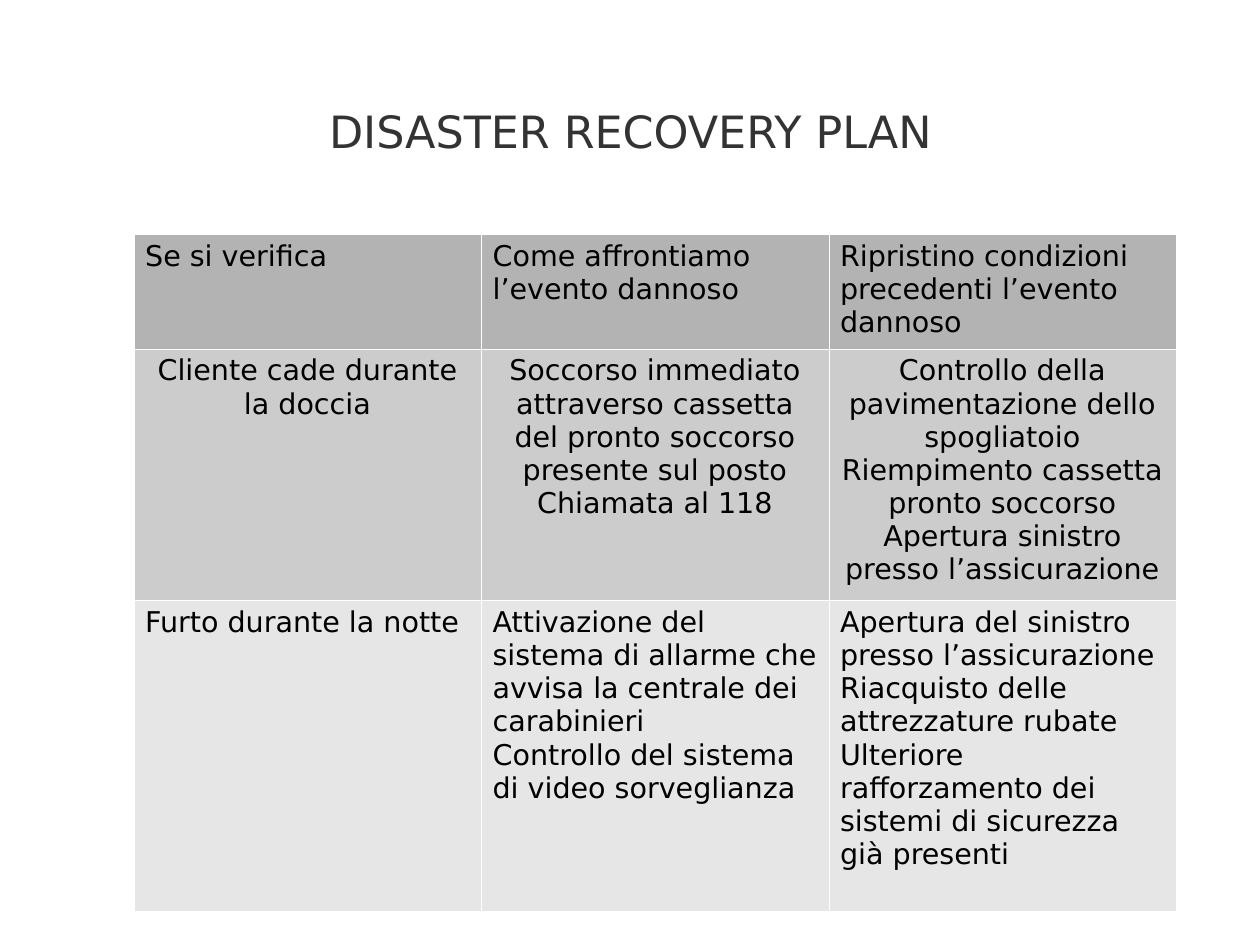
from dataclasses import dataclass

from lxml.etree import SubElement
from pptx import Presentation
from pptx.dml.color import RGBColor
from pptx.enum.text import MSO_ANCHOR, PP_ALIGN
from pptx.oxml.ns import qn
from pptx.util import Cm, Inches, Pt


@dataclass(frozen=True)
class Theme:
    font: str = "DejaVu Sans"
    title_size: float = 28
    cell_size: float = 18
    title_color: str = "333333"
    cell_color: str = "000000"
    border_color: str = "FFFFFF"
    border_width: float = 0.06
    row_fills: tuple = ("B3B3B3", "CCCCCC", "E6E6E6")


THEME = Theme()
WIDTH, HEIGHT = Cm(28), Cm(21)
LINE_HEIGHT, CELL_PADDING = 0.29, 0.11
ROW_LINES = (3, 7, 9)
ROW_HEIGHTS = [Inches(n * LINE_HEIGHT + CELL_PADDING) for n in ROW_LINES]
TITLE_BOX = [Inches(v) for v in (0.77, 0.49, 9.49, 1.31)]
TABLE_BOX = [Inches(v) for v in (1.17, 2.05, 9.12)] + [sum(ROW_HEIGHTS)]
ROW_ALIGNS = (PP_ALIGN.LEFT, PP_ALIGN.CENTER, PP_ALIGN.LEFT)
TITLE = "DISASTER RECOVERY PLAN"
PLAN = [
    [
        ["Se si verifica"],
        ["Come affrontiamo l’evento dannoso"],
        ["Ripristino condizioni precedenti l’evento dannoso"],
    ],
    [
        ["Cliente cade durante la doccia"],
        [
            "Soccorso immediato attraverso cassetta del pronto soccorso presente sul posto",
            "Chiamata al 118",
        ],
        [
            "Controllo della pavimentazione dello spogliatoio",
            "Riempimento cassetta pronto soccorso",
            "Apertura sinistro presso l’assicurazione",
        ],
    ],
    [
        ["Furto durante la notte"],
        [
            "Attivazione del sistema di allarme che avvisa la centrale dei carabinieri",
            "Controllo del sistema di video sorveglianza",
        ],
        [
            "Apertura del sinistro presso l’assicurazione",
            "Riacquisto delle attrezzature rubate",
            "Ulteriore rafforzamento dei sistemi di sicurezza già presenti",
        ],
    ],
]


def write(tf, lines, size, color, align):
    tf.text = "\n".join(lines)
    for p in tf.paragraphs:
        p.alignment = align
        p.font.name = THEME.font
        p.font.size = Pt(size)
        p.font.color.rgb = RGBColor.from_string(color)


def set_borders(cell):
    tc_pr = cell._tc.get_or_add_tcPr()
    for index, side in enumerate(("lnL", "lnR", "lnT", "lnB")):
        ln = SubElement(tc_pr, qn(f"a:{side}"), w=str(Pt(THEME.border_width)))
        fill = SubElement(ln, qn("a:solidFill"))
        SubElement(fill, qn("a:srgbClr"), val=THEME.border_color)
        tc_pr.insert(index, ln)


def add_title(slide, box):
    tf = slide.shapes.add_textbox(*box).text_frame
    tf.word_wrap = True
    tf.vertical_anchor = MSO_ANCHOR.MIDDLE
    tf.margin_left = tf.margin_right = tf.margin_top = tf.margin_bottom = 0
    write(tf, [TITLE], THEME.title_size, THEME.title_color, PP_ALIGN.CENTER)


def add_plan_table(slide, box):
    table = slide.shapes.add_table(len(PLAN), len(PLAN[0]), *box).table
    table.first_row = table.horz_banding = False
    for row, height in zip(table.rows, ROW_HEIGHTS):
        row.height = height
    for r, (texts, fill, align) in enumerate(zip(PLAN, THEME.row_fills, ROW_ALIGNS)):
        for c, lines in enumerate(texts):
            cell = table.cell(r, c)
            cell.fill.solid()
            cell.fill.fore_color.rgb = RGBColor.from_string(fill)
            set_borders(cell)
            write(cell.text_frame, lines, THEME.cell_size, THEME.cell_color, align)


def main():
    prs = Presentation()
    prs.slide_width, prs.slide_height = WIDTH, HEIGHT
    slide = prs.slides.add_slide(prs.slide_layouts[6])
    add_title(slide, TITLE_BOX)
    add_plan_table(slide, TABLE_BOX)
    prs.save("out.pptx")


if __name__ == "__main__":
    main()
